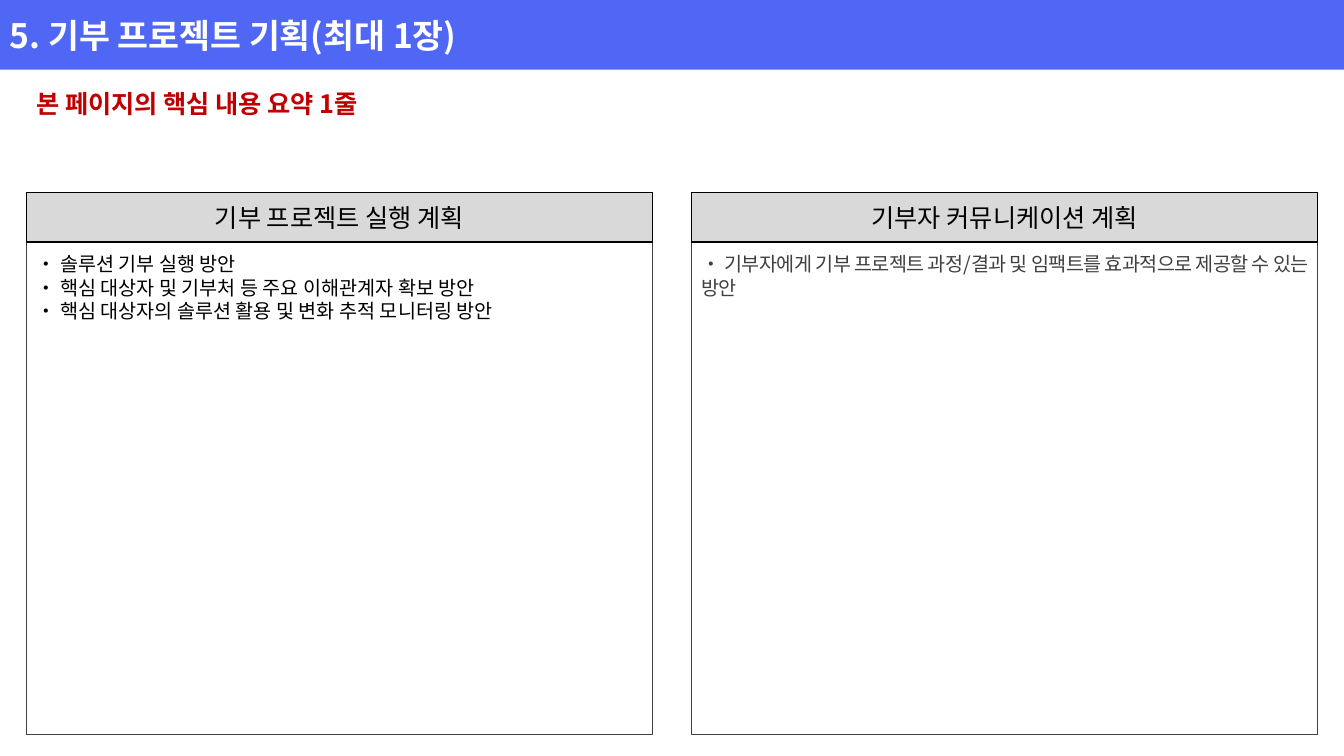
from dataclasses import dataclass

from lxml import etree
from pptx import Presentation
from pptx.dml.color import RGBColor
from pptx.enum import shapes, text
from pptx.oxml.ns import qn
from pptx.util import Inches, Pt


@dataclass(frozen=True)
class Theme:
    font: str = "Noto Sans CJK KR"
    banner: str = "5067F5"
    heading_fill: str = "D9D9D9"
    white: str = "FFFFFF"
    black: str = "000000"
    gray: str = "404040"
    red: str = "C00000"
    title_size: int = 24
    heading_size: int = 18
    body_size: int = 14


class SlideBuilder:
    def __init__(self, slide, theme):
        self.slide = slide
        self.theme = theme

    def rect(self, box, fill=None, line=None):
        shape = self.slide.shapes.add_shape(
            shapes.MSO_SHAPE.RECTANGLE, *map(Inches, box))
        shape.shadow.inherit = False
        if fill:
            shape.fill.solid()
            shape.fill.fore_color.rgb = RGBColor.from_string(fill)
        else:
            shape.fill.background()
        if line:
            shape.line.color.rgb = RGBColor.from_string(line)
            shape.line.width = Pt(1)
        else:
            shape.line.fill.background()
        return shape

    def textbox(self, box):
        return self.slide.shapes.add_textbox(*map(Inches, box))

    def set_text(self, shape, lines, size, color, bold=False, spacing=None,
                 anchor=text.MSO_ANCHOR.MIDDLE, **paragraph_format):
        """Fill a shape with one paragraph per line; spacing is between letters, in points."""
        frame = shape.text_frame
        frame.word_wrap = True
        frame.vertical_anchor = anchor
        font_format = {"size": Pt(size), "bold": bold, "name": self.theme.font}
        for index, line in enumerate(lines):
            paragraph = frame.add_paragraph() if index else frame.paragraphs[0]
            for key, value in paragraph_format.items():
                setattr(paragraph, key, value)
            run = paragraph.add_run()
            run.text = line
            for key, value in font_format.items():
                setattr(run.font, key, value)
            run.font.color.rgb = RGBColor.from_string(color)
            properties = run._r.get_or_add_rPr()
            etree.SubElement(properties, qn("a:ea"), typeface=self.theme.font)
            if spacing is not None:
                properties.set("spc", str(round(spacing * 100)))

    def panel(self, left, heading, bullets, body_height, color, spacing=None):
        """Draw a framed column with a heading bar and a bulleted list."""
        theme, top, width = self.theme, 1.91, 6.21
        self.rect((left, top, width, 5.38), line=theme.gray)
        self.set_text(self.textbox((left, top + 0.54, width, body_height)),
                      [f"• {bullet}" for bullet in bullets],
                      theme.body_size, color, spacing=spacing,
                      anchor=text.MSO_ANCHOR.TOP, alignment=text.PP_ALIGN.JUSTIFY)
        bar = self.rect((left, top, width, 0.49), theme.heading_fill, theme.black)
        self.set_text(bar, [heading], theme.heading_size, theme.black,
                      alignment=text.PP_ALIGN.CENTER)


def main():
    deck = Presentation()
    deck.slide_width, deck.slide_height = Inches(13.33), Inches(7.5)
    theme = Theme()
    page = SlideBuilder(deck.slides.add_slide(deck.slide_layouts[6]), theme)

    banner = page.rect((0, 0, 13.33, 0.69), theme.banner)
    page.set_text(banner, ["5. 기부 프로젝트 기획(최대 1장)"], theme.title_size,
                  theme.white, bold=True, alignment=text.PP_ALIGN.LEFT)

    page.panel(0.26, "기부 프로젝트 실행 계획", [
        "솔루션 기부 실행 방안",
        "핵심 대상자 및 기부처 등 주요 이해관계자 확보 방안",
        "핵심 대상자의 솔루션 활용 및 변화 추적 모니터링 방안",
    ], 0.81, theme.black)
    page.panel(6.86, "기부자 커뮤니케이션 계획", [
        "기부자에게 기부 프로젝트 과정/결과 및 임팩트를 효과적으로 제공할 수 있는 방안",
    ], 0.57, theme.gray, spacing=-0.5)

    summary = page.textbox((0.26, 0.69, 12.81, 0.53))
    page.set_text(summary, ["본 페이지의 핵심 내용 요약 1줄"], theme.heading_size,
                  theme.red, bold=True, line_spacing=1.5)

    deck.save("out.pptx")


if __name__ == "__main__":
    main()
